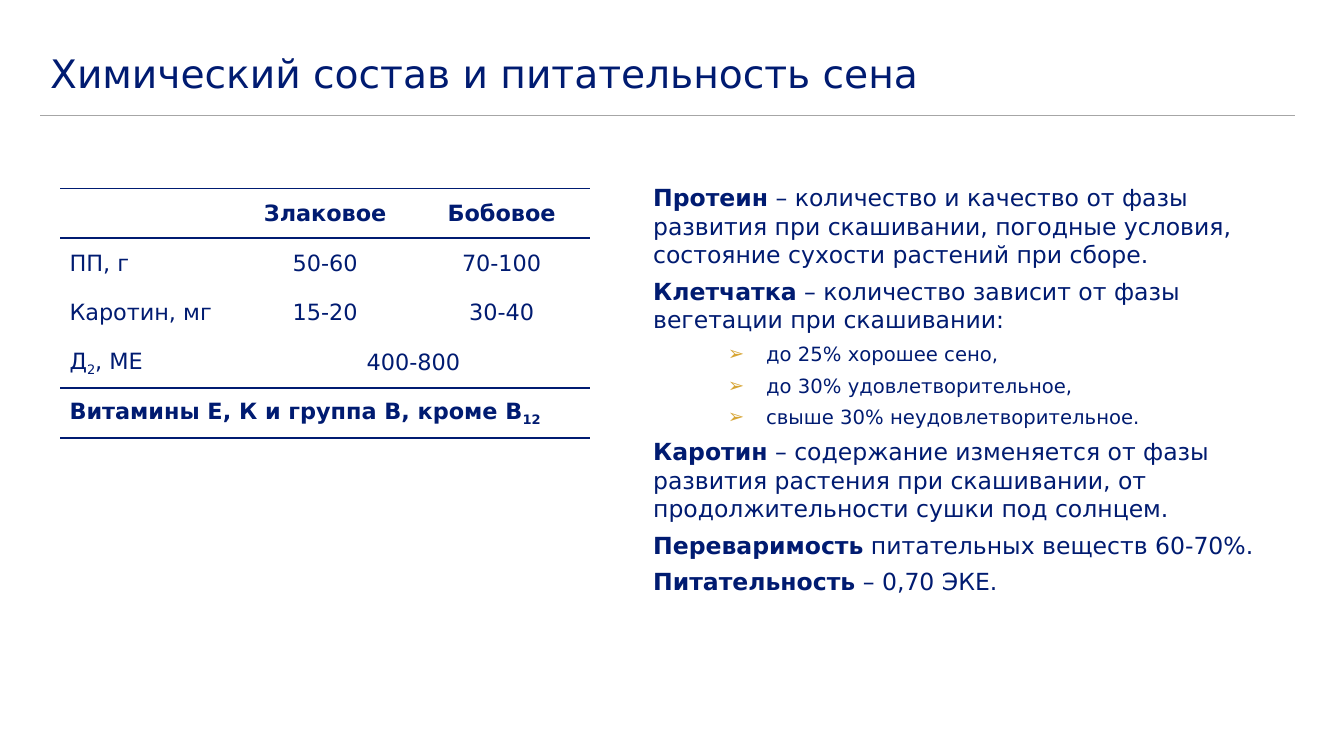
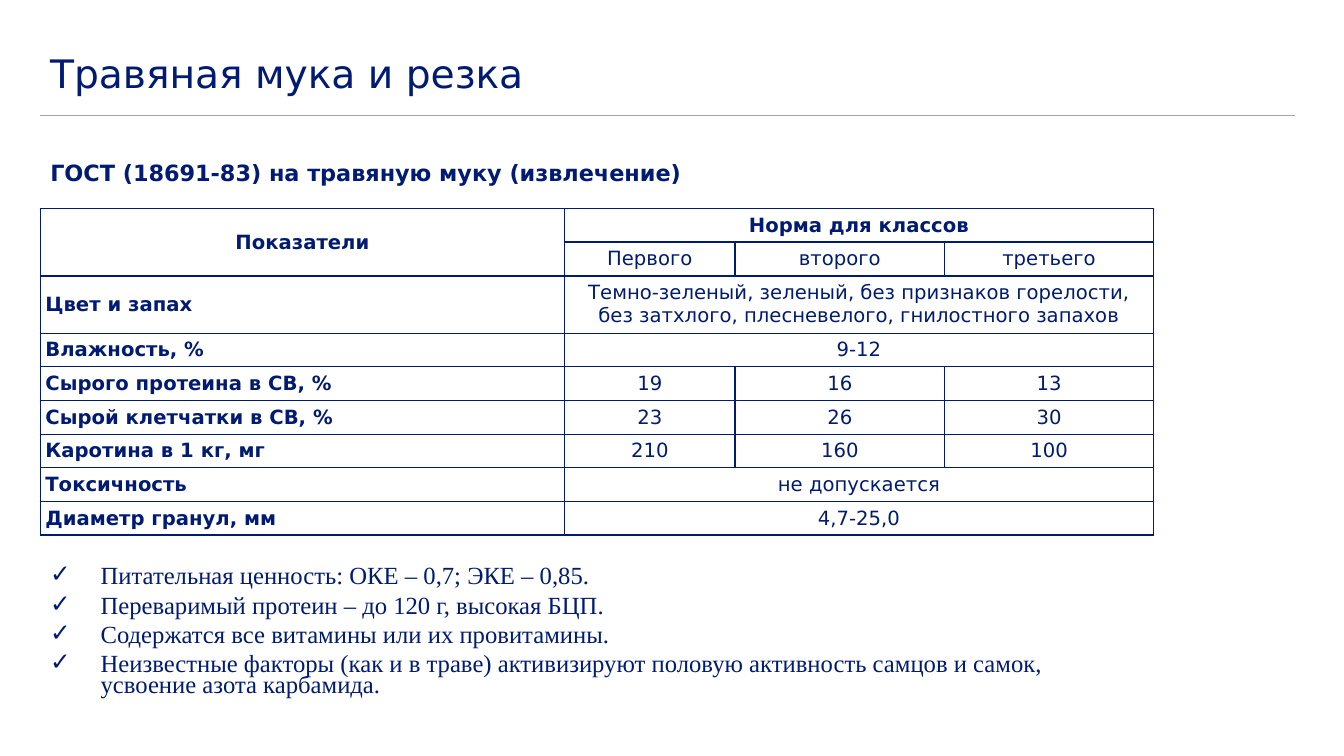
from dataclasses import dataclass
from typing import NamedTuple, Optional

import pptx
import pptx.dml.color
import pptx.enum.shapes
import pptx.enum.text
import pptx.oxml
import pptx.oxml.ns
import pptx.util
from pptx.util import Inches, Pt

Align = pptx.enum.text.PP_ALIGN
Anchor = pptx.enum.text.MSO_ANCHOR
Color = pptx.dml.color.RGBColor

NAVY = Color(0x00, 0x1B, 0x71)
GOLD = Color(0xD7, 0xA5, 0x34)
GRAY = Color(0xA6, 0xA6, 0xA6)
WHITE = Color(0xFF, 0xFF, 0xFF)
SANS = "DejaVu Sans"
SERIF = "Times New Roman"
LEFT = 0.4
WIDTH = 12.44


class Run(NamedTuple):
    text: str
    bold: bool = False
    sub: bool = False


class Bullet(NamedTuple):
    char: str
    left: float
    hang: float
    color: Color


@dataclass
class Cell:
    runs: list[Run]
    center: bool = True
    cols: int = 1
    rows: int = 1


@dataclass
class Grid:
    left: float
    top: float
    widths: list[float]
    heights: list[float]
    cells: list[list[Optional[Cell]]]
    size: float
    pad: float
    rules: dict[int, float]  # line widths by row boundary
    heavy: dict[tuple[int, int], float]  # exceptions by (boundary, column)
    side: float = 0


# Text
def node(parent, tag: str, **attrs: str):
    child = pptx.oxml.parse_xml(f"<a:{tag} {pptx.oxml.ns.nsdecls('a')}/>")
    for key, value in attrs.items():
        child.set(key, value)
    parent.append(child)
    return child


def write(frame, runs: list[Run], *, size: float, font: str = SANS,
          align=Align.LEFT, line: Optional[float] = None, before: float = 0,
          after: float = 0, bullet: Optional[Bullet] = None) -> None:
    """Add one paragraph to the frame, using its empty first one if any."""
    first = not frame.text
    para = frame.paragraphs[0] if first else frame.add_paragraph()
    if bullet:
        props = para._p.get_or_add_pPr()
        props.set("marL", str(Inches(bullet.left)))
        props.set("indent", str(-Inches(bullet.hang)))
        node(node(props, "buClr"), "srgbClr", val=str(bullet.color))
        node(props, "buFont", typeface=SANS)
        node(props, "buChar", char=bullet.char)
    para.alignment = align
    if line:
        para.line_spacing = line
    para.space_before = Pt(0 if first else before)
    para.space_after = Pt(after)
    for item in runs:
        run = para.add_run()
        run.text = item.text
        run.font.name = font
        run.font.size = Pt(size)
        run.font.bold = item.bold
        run.font.color.rgb = NAVY
        if item.sub:
            run._r.get_or_add_rPr().set("baseline", "-25000")


def box(slide, left: float, top: float, width: float, height: float,
        anchor=Anchor.TOP, back: Optional[Color] = None):
    shape = slide.shapes.add_textbox(
        Inches(left), Inches(top), Inches(width), Inches(height))
    if back is not None:
        shape.fill.solid()
        shape.fill.fore_color.rgb = back
    frame = shape.text_frame
    frame.word_wrap = True
    frame.vertical_anchor = anchor
    return frame


# Tables
def edge(cell, tag: str, width: float) -> None:
    line = node(cell._tc.get_or_add_tcPr(), tag, w=str(Pt(width)))
    if width:
        node(node(line, "solidFill"), "srgbClr", val=str(NAVY))
    else:
        node(line, "noFill")


def draw(slide, grid: Grid) -> None:
    frame = slide.shapes.add_table(
        len(grid.heights), len(grid.widths), Inches(grid.left),
        Inches(grid.top), Inches(sum(grid.widths)), Inches(sum(grid.heights)))
    table = frame.table
    table.first_row = table.horz_banding = False
    for col, width in zip(table.columns, grid.widths):
        col.width = Inches(width)
    for row, height in zip(table.rows, grid.heights):
        row.height = Inches(height)
    for r, row in enumerate(grid.cells):
        for c, cell in enumerate(row):
            if cell:
                fill(table, grid, cell, r, c)


def fill(table, grid: Grid, item: Cell, top: int, left: int) -> None:
    end, last = top + item.rows, left + item.cols
    for r in range(top, end):
        for c in range(left, last):
            part = table.cell(r, c)
            edge(part, "lnL", grid.side)
            edge(part, "lnR", grid.side)
            for tag, bound in (("lnT", top), ("lnB", end)):
                width = grid.heavy.get((bound, c), grid.rules.get(bound, 0))
                edge(part, tag, width)
            part.fill.background()
    cell = table.cell(top, left)
    if item.rows * item.cols > 1:
        cell.merge(table.cell(end - 1, last - 1))
    cell.vertical_anchor = Anchor.MIDDLE
    cell.margin_left = cell.margin_right = Inches(grid.pad)
    cell.margin_top = cell.margin_bottom = Inches(0.05)
    write(cell.text_frame, item.runs, size=grid.size,
          align=Align.CENTER if item.center else Align.LEFT)


def head(text: str, cols: int = 1, rows: int = 1) -> Cell:
    return Cell([Run(text, True)], cols=cols, rows=rows)


def label(text: str, bold: bool = False) -> Cell:
    return Cell([Run(text, bold)], center=False)


def value(text: str, cols: int = 1) -> Cell:
    return Cell([Run(text)], cols=cols)


# Shared slide frame
def start(deck, title: str):
    slide = deck.slides.add_slide(deck.slide_layouts[6])
    rule = slide.shapes.add_connector(
        pptx.enum.shapes.MSO_CONNECTOR.STRAIGHT, Inches(LEFT), Inches(1.15),
        Inches(LEFT + WIDTH), Inches(1.15))
    rule.line.color.rgb = GRAY
    rule.line.width = Pt(0.75)
    node(rule._element.spPr, "effectLst")
    frame = box(slide, LEFT, 0.45, WIDTH, 0.6, Anchor.MIDDLE)
    write(frame, [Run(title)], size=28, line=0.9)
    return slide


# Hay: composition table and notes
HAY = Grid(
    0.6, 1.87, [1.75] * 3, [0.495] * 5,
    [
        [label(""), head("Злаковое"), head("Бобовое")],
        [label("ПП, г"), value("50-60"), value("70-100")],
        [label("Каротин, мг"), value("15-20"), value("30-40")],
        [Cell([Run("Д"), Run("2", sub=True), Run(", МЕ")], center=False),
         value("400-800", 2), None],
        [Cell([Run("Витамины Е, К и группа В, кроме В", True),
               Run("12", True, True)], center=False, cols=3), None, None],
    ],
    size=16, pad=0.09, rules={0: 1.5, 1: 1.5, 4: 1, 5: 1}, heavy={})

ARROW = Bullet("➢", 1.12, 0.38, GOLD)
NOTES = [
    ("Протеин", " – количество и качество от фазы развития при скашивании, "
     "погодные условия, состояние сухости растений при сборе.", []),
    ("Клетчатка", " – количество зависит от фазы вегетации при скашивании:",
     ["до 25% хорошее сено,", "до 30% удовлетворительное,",
      "свыше 30% неудовлетворительное."]),
    ("Каротин", " – содержание изменяется от фазы развития растения при "
     "скашивании, от продолжительности сушки под солнцем.", []),
    ("Переваримость", " питательных веществ 60-70%.", []),
    ("Питательность", " – 0,70 ЭКЕ.", []),
]


def hay(deck) -> None:
    slide = start(deck, "Химический состав и питательность сена")
    draw(slide, HAY)
    frame = box(slide, 6.38, 1.77, 6.57, 4.72, back=WHITE)
    for term, text, points in NOTES:
        write(frame, [Run(term, True), Run(text)], size=16.8, before=6)
        for point in points:
            write(frame, [Run(point)], size=14, before=6, bullet=ARROW)


# Grass meal: standard table and facts
MEAL = Grid(
    LEFT, 2.07, [5.2, 1.69, 2.08, 2.07], [0.32] * 2 + [0.55] + [0.32] * 6,
    [
        [head("Показатели", rows=2), head("Норма для классов", 3), None, None],
        [None, value("Первого"), value("второго"), value("третьего")],
        [label("Цвет и запах", True),
         value("Темно-зеленый, зеленый, без признаков горелости, "
               "без затхлого, плесневелого, гнилостного запахов", 3),
         None, None],
        [label("Влажность, %", True), value("9-12", 3), None, None],
        [label("Сырого протеина в СВ, %", True),
         value("19"), value("16"), value("13")],
        [label("Сырой клетчатки в СВ, %", True),
         value("23"), value("26"), value("30")],
        [label("Каротина в 1 кг, мг", True),
         value("210"), value("160"), value("100")],
        [label("Токсичность", True), value("не допускается", 3), None, None],
        [label("Диаметр гранул, мм", True), value("4,7-25,0", 3), None, None],
    ],
    size=14, pad=0.05, rules={row: 1 for row in range(10)},
    heavy={(1, 1): 1.5, (1, 2): 1.5, (1, 3): 1.5, (2, 0): 2.25}, side=1)

CHECK = Bullet("✓", 0.5, 0.5, NAVY)
FACTS = [
    "Питательная ценность: ОКЕ – 0,7; ЭКЕ – 0,85.",
    "Переваримый протеин – до 120 г, высокая БЦП.",
    "Содержатся все витамины или их провитамины.",
    "Неизвестные факторы (как и в траве) активизируют половую активность "
    "самцов и самок, усвоение азота карбамида.",
]


def meal(deck) -> None:
    slide = start(deck, "Травяная мука и резка")
    draw(slide, MEAL)
    frame = box(slide, LEFT, 5.59, 10.94, 1.49, back=WHITE)
    for fact in FACTS:
        write(frame, [Run(fact)], size=17.6, font=SERIF, line=0.7, after=6,
              bullet=CHECK)
    frame = box(slide, LEFT, 1.53, 6.68, 0.37, Anchor.MIDDLE)
    write(frame, [Run("ГОСТ (18691-83) на травяную муку (извлечение)", True)],
          size=16)


def main() -> None:
    deck = pptx.Presentation()
    deck.slide_width, deck.slide_height = Inches(13.33), Inches(7.5)
    hay(deck)
    meal(deck)
    deck.save("out.pptx")


if __name__ == "__main__":
    main()
